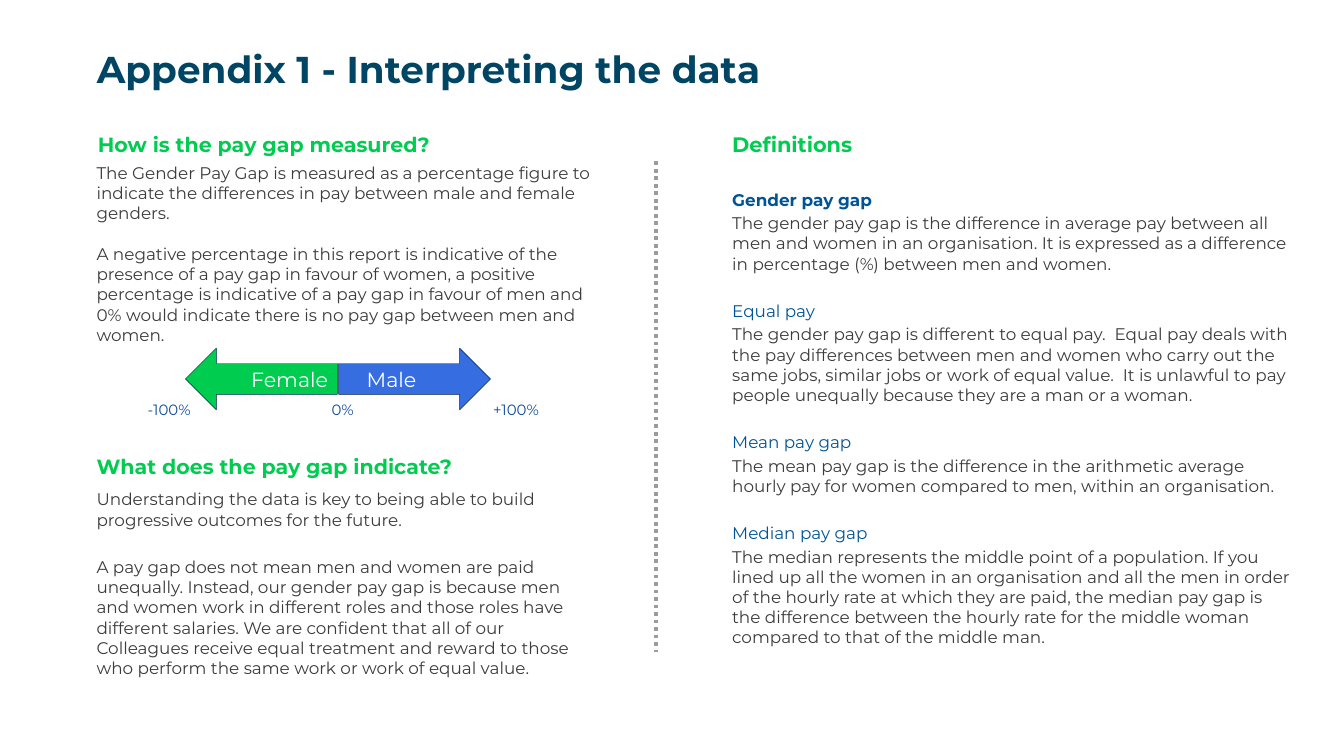
from lxml import etree
from pptx import Presentation
from pptx.dml.color import RGBColor
from pptx.enum.dml import MSO_LINE
from pptx.enum.shapes import MSO_CONNECTOR, MSO_SHAPE
from pptx.enum.text import MSO_ANCHOR, PP_ALIGN
from pptx.oxml.ns import qn
from pptx.util import Inches, Pt

DOTS = MSO_LINE.ROUND_DOT
STRAIGHT = MSO_CONNECTOR.STRAIGHT
LEFT, RIGHT = MSO_SHAPE.LEFT_ARROW, MSO_SHAPE.RIGHT_ARROW
MIDDLE = MSO_ANCHOR.MIDDLE
CENTER = PP_ALIGN.CENTER

FONT = "Montserrat"
COLORS = {
    "title": "004664", "head": "00CC50", "body": "3C3C3C", "term": "005495",
    "female": "00CC50", "male": "366DE1", "edge": "002541", "word": "FFFFFF",
    "scale": "0D4C9A", "rule": "9C9C9C",
}

MEASURE = [
    "The Gender Pay Gap is measured as a percentage figure to indicate the "
    "differences in pay between male and female genders.",
    "A negative percentage in this report is indicative of the presence of a "
    "pay gap in favour of women, a positive percentage is indicative of a pay "
    "gap in favour of men and 0% would indicate there is no pay gap between "
    "men and women.",
]
MEANING = [
    "Understanding the data is key to being able to build progressive "
    "outcomes for the future.",
    "A pay gap does not mean men and women are paid unequally. Instead, our "
    "gender pay gap is because men and women work in different roles and "
    "those roles have different salaries. We are confident that all of our "
    "Colleagues receive equal treatment and reward to those who perform the "
    "same work or work of equal value.",
]
TERMS = [
    ("Gender pay gap",
     "The gender pay gap is the difference in average pay between all men and "
     "women in an organisation. It is expressed as a difference in percentage "
     "(%) between men and women."),
    ("Equal pay",
     "The gender pay gap is different to equal pay.  Equal pay deals with the "
     "pay differences between men and women who carry out the same jobs, "
     "similar jobs or work of equal value.  It is unlawful to pay people "
     "unequally because they are a man or a woman."),
    ("Mean pay gap",
     "The mean pay gap is the difference in the arithmetic average hourly pay "
     "for women compared to men, within an organisation."),
    ("Median pay gap",
     "The median represents the middle point of a population. If you lined up "
     "all the women in an organisation and all the men in order of the hourly "
     "rate at which they are paid, the median pay gap is the difference "
     "between the hourly rate for the middle woman compared to that of the "
     "middle man."),
]


def color(name):
    return RGBColor.from_string(COLORS[name])


def add_box(slide, left, top, width, height):
    box = slide.shapes.add_textbox(
        Inches(left), Inches(top), Inches(width), Inches(height))
    frame = box.text_frame
    frame.word_wrap = True
    return frame


def add_para(frame, text, size, tone, bold=False, gap=0):
    """Add a paragraph; the first one of a frame gets no space before."""
    para = frame.paragraphs[0]
    if para.runs:
        para = frame.add_paragraph()
        para.space_before = Pt(gap)
    run = para.add_run()
    run.text = text
    font = run.font
    font.name, font.size, font.bold = FONT, Pt(size), bold
    font.color.rgb = color(tone)
    return para


def add_title(slide, text):
    frame = add_box(slide, 0.53, 0.19, 9.18, 0.65)
    frame.margin_left = Inches(0.19)
    frame.vertical_anchor = MIDDLE
    add_para(frame, text, 20, "title", True).line_spacing = Pt(23.6)


def add_head(slide, left, top, text, size=11):
    add_para(add_box(slide, left, top, 3.84, 0.55), text, size, "head", True)


def add_body(slide, top, height, texts, gap):
    frame = add_box(slide, 0.62, top, 3.91, height)
    for text in texts:
        add_para(frame, text, 9, "body", gap=gap)


def add_terms(slide):
    frame = add_box(slide, 5.35, 1.36, 4.36, 3.6)
    for i, (term, text) in enumerate(TERMS):
        add_para(frame, term, 9, "term", bold=i == 0, gap=14.4)
        add_para(frame, text, 9, "body", gap=1.8)


def add_arrow(slide, kind, left, tone, word, indent):
    arrow = slide.shapes.add_shape(
        kind, Inches(left), Inches(2.59), Inches(1.13), Inches(0.46))
    arrow.shadow.inherit = False
    arrow.fill.solid()
    arrow.fill.fore_color.rgb = color(tone)
    arrow.line.color.rgb = color("edge")
    arrow.line.width = Pt(0.25)
    add_para(add_box(slide, left + indent, 2.68, 0.91, 0.29), word, 11, "word")


def add_scale(slide):
    for i, label in enumerate(["-100%", "0%", "+100%"]):
        frame = add_box(slide, 0.91 + 1.29 * i, 2.91, 0.7, 0.28)
        frame.vertical_anchor = MIDDLE
        add_para(frame, label, 8, "scale").alignment = CENTER


def add_rule(slide):
    x = Inches(4.88)
    rule = slide.shapes.add_connector(
        STRAIGHT, x, Inches(1.2), x, Inches(4.85))
    rule.line.color.rgb = color("rule")
    rule.line.width = Pt(2)
    rule.line.dash_style = DOTS
    etree.SubElement(rule.element.spPr, qn("a:effectLst"))


def main():
    deck = Presentation()
    deck.slide_width = Inches(10)
    deck.slide_height = deck.slide_width * 9 // 16
    slide = deck.slides.add_slide(deck.slide_layouts[6])

    add_rule(slide)
    add_title(slide, "Appendix 1 - Interpreting the data")
    add_head(slide, 0.63, 0.93, "How is the pay gap measured?")
    add_body(slide, 1.16, 1.45, MEASURE, 11)
    add_arrow(slide, RIGHT, 2.52, "male", "Male", 0.11)
    add_arrow(slide, LEFT, 1.38, "female", "Female", 0.39)
    add_scale(slide)
    add_head(slide, 0.62, 3.33, "What does the pay gap indicate?")
    add_body(slide, 3.59, 1.6, MEANING, 14.6)
    add_head(slide, 5.35, 0.93, "Definitions", 11.2)
    add_terms(slide)
    deck.save("out.pptx")


if __name__ == "__main__":
    main()
